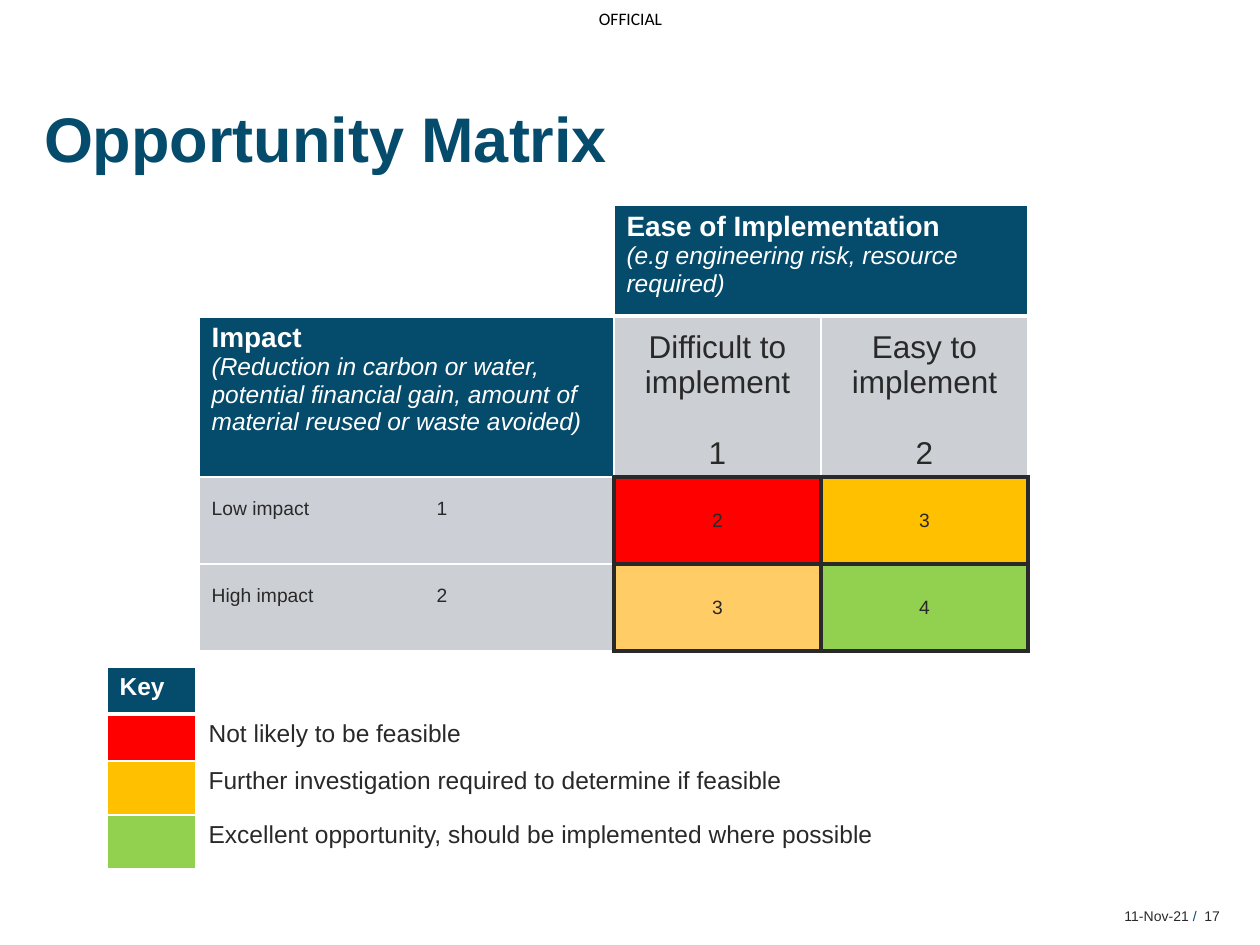
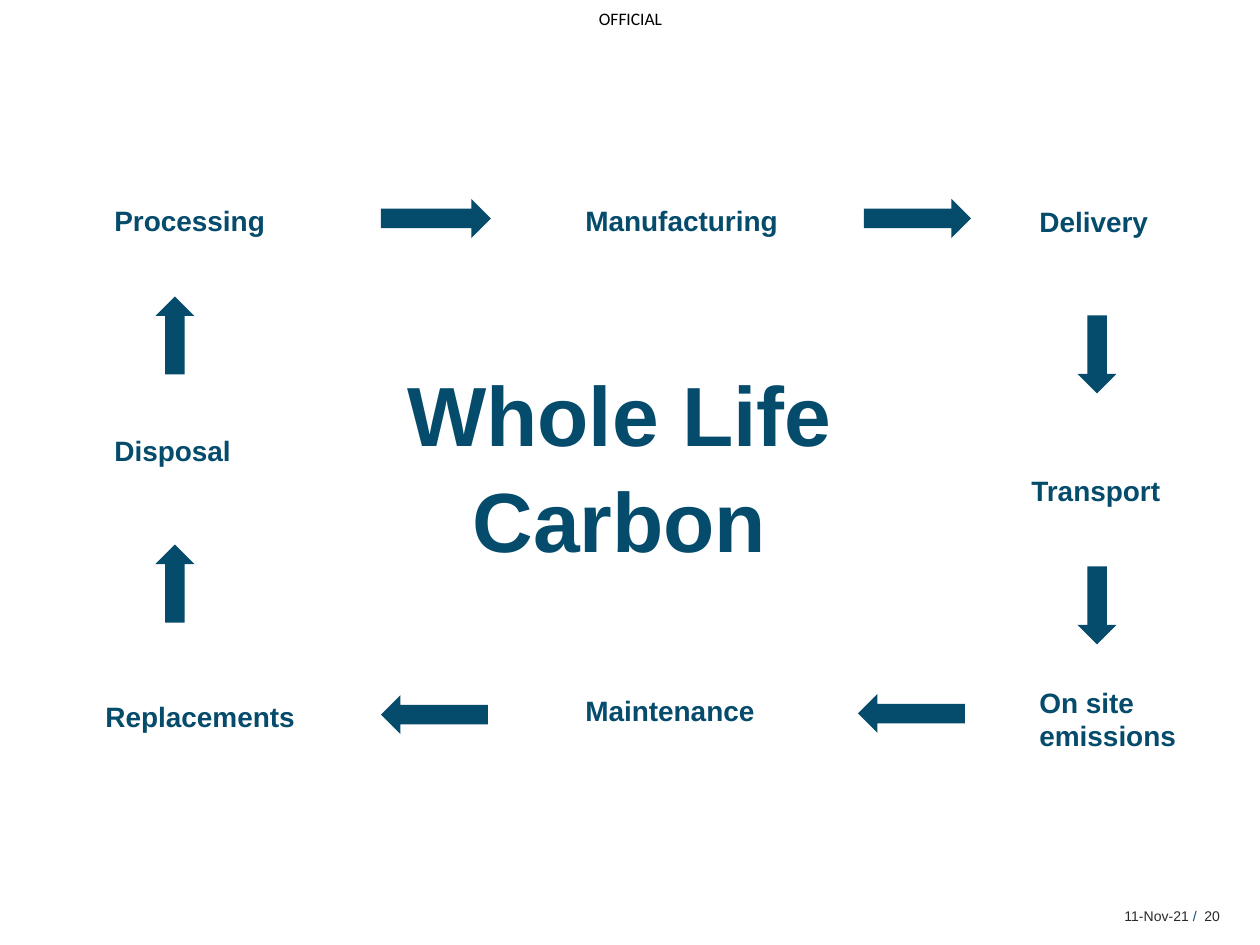
from pptx import Presentation
from pptx.dml.color import RGBColor
from pptx.enum.shapes import MSO_SHAPE as Shape
from pptx.enum.text import MSO_ANCHOR as Anchor, PP_ALIGN as Align
from pptx.oxml.ns import qn
from pptx.util import Pt
from lxml.etree import SubElement, Element

PX = 914400 / 126
COLORS = {
    "navy": "054B6B", "dark": "292929", "black": "000000", "white": "FFFFFF",
    "grey": "CCD0D4", "cool": "CCD0D6", "red": "FF0000", "amber": "FFC000",
    "peach": "FFCC66", "green": "92D050",
}
FORMATS = {
    "title": {"size": 36, "bold": True, "color": "navy"},
    "hero": {"size": 48, "bold": True, "color": "navy"},
    "label": {"size": 16, "bold": True, "color": "navy"},
    "marking": {"size": 10, "name": "Calibri", "color": "black"},
    "footer": {"size": 8, "color": "dark"},
    "slash": {"size": 8, "color": "navy"},
    "head": {"size": 16, "bold": True, "color": "white"},
    "hint": {"size": 14, "italic": True, "color": "white"},
    "key": {"size": 14, "bold": True, "color": "white"},
    "column": {"size": 18, "color": "dark"},
    "score": {"size": 11, "color": "dark"},
    "meaning": {"size": 14, "color": "dark"},
}
SIDES = "LRTB"


def emu(px):
    return round(px * PX)


def rgb(name):
    return RGBColor.from_string(COLORS[name])


class Deck:
    def __init__(self):
        self.prs = Presentation()
        self.prs.slide_width, self.prs.slide_height = emu(1260), emu(945)
        self.s = None

    def slide(self, number):
        """Start a slide with its marking and footer."""
        self.s = self.prs.slides.add_slide(self.prs.slide_layouts[6])
        bare = {"inset": 0, "anchor": Anchor.MIDDLE}
        self.text((1193, 903, 5, 25), [("/", "slash")], wrap=False, **bare)
        self.text((580, 0, 101, 37), [("OFFICIAL", "marking")],
                  align=Align.CENTER, **bare)
        for box, txt in (((895, 903, 294, 25), "11-Nov-21"),
                         ((1200, 903, 20, 25), number)):
            self.text(box, [(txt, "footer")], align=Align.RIGHT, **bare)

    def paragraphs(self, tf, lines, align=Align.LEFT, spacing=None, gap=None,
                   tab=None):
        """Fill a text frame with (text, format) lines; gap separates them."""
        for i, (txt, fmt) in enumerate(lines):
            p = tf.add_paragraph() if i else tf.paragraphs[0]
            if tab:
                tabs = SubElement(p._p.get_or_add_pPr(), qn("a:tabLst"))
                SubElement(tabs, qn("a:tab"), pos=str(emu(tab)), algn="l")
            p.alignment = align
            if spacing:
                p.line_spacing = spacing
            if gap and i:
                p.space_before = Pt(gap)
            r = p.add_run()
            r.text = txt
            for key, value in {"name": "Arial", **FORMATS[fmt]}.items():
                if key == "color":
                    r.font.color.rgb = rgb(value)
                else:
                    setattr(r.font, key, Pt(value) if key == "size" else value)

    def text(self, box, lines, inset=None, anchor=Anchor.TOP, wrap=True, **para):
        tf = self.s.shapes.add_textbox(*map(emu, box)).text_frame
        tf.word_wrap, tf.vertical_anchor = wrap, anchor
        if inset is not None:
            for side in ("left", "right", "top", "bottom"):
                setattr(tf, f"margin_{side}", emu(inset))
        self.paragraphs(tf, lines, **para)

    def title(self, box, txt, fmt, align=Align.LEFT):
        self.text(box, [(txt, fmt)], inset=0, align=align, spacing=1.05)

    def arrow(self, x, y, length, turn):
        sp = self.s.shapes.add_shape(Shape.RIGHT_ARROW, *map(emu, (x, y, length, 39)))
        sp.shadow.inherit = False
        sp.fill.solid()
        sp.fill.fore_color.rgb = rgb("navy")
        sp.line.fill.background()
        sp.rotation = turn

    def table(self, left, top, widths, heights):
        """Add an unbanded table with the given columns and rows."""
        box = map(emu, (left, top, sum(widths), sum(heights)))
        tbl = self.s.shapes.add_table(len(heights), len(widths), *box).table
        tbl.first_row = tbl.horz_banding = False
        for col, w in zip(tbl.columns, widths):
            col.width = emu(w)
        for row, h in zip(tbl.rows, heights):
            row.height = emu(h)
        return tbl

    def cell(self, cell, fill=None, lines=(), edges=None, anchor=Anchor.TOP,
             bottom=None, **para):
        """Style one cell; edges override its thin white borders."""
        if fill:
            cell.fill.solid()
            cell.fill.fore_color.rgb = rgb(fill)
        else:
            cell.fill.background()
        cell.vertical_anchor = anchor
        if bottom:
            cell.margin_bottom = emu(bottom)
        if lines:
            self.paragraphs(cell.text_frame, lines, **para)
        else:
            end = cell.text_frame.paragraphs[0]._p.get_or_add_endParaRPr()
            end.set("sz", "1400")
        # Borders come before the fill
        tcPr = cell._tc.get_or_add_tcPr()
        for i, side in enumerate(SIDES):
            color, width = (edges or {}).get(side, ("white", 1))
            ln = Element(qn(f"a:ln{side}"), w=str(Pt(width)))
            solid = SubElement(ln, qn("a:solidFill"))
            SubElement(solid, qn("a:srgbClr"), val=COLORS[color])
            tcPr.insert(i, ln)


def opportunity_matrix(d):
    d.slide("17")
    d.title((44, 96, 815, 76), "Opportunity Matrix", "title")
    thick, rule = ("dark", 3), {"B": ("white", 3)}

    # Matrix headings
    tbl = d.table(199, 205, (355, 60, 207, 207), (111, 159, 87, 87))
    tbl.cell(0, 2).merge(tbl.cell(0, 3))
    for row in (1, 2, 3):
        tbl.cell(row, 0).merge(tbl.cell(row, 1))
    ease = [("Ease of Implementation", "head"),
            ("(e.g engineering risk, resource required)", "hint")]
    impact = [("Impact", "head"),
              ("(Reduction in carbon or water, potential financial gain, "
               "amount of material reused or waste avoided)", "hint")]
    for col, (fill, lines) in enumerate((("white", ()), ("white", ()),
                                         ("navy", ease), ("navy", ()))):
        d.cell(tbl.cell(0, col), fill, lines, rule)
    d.cell(tbl.cell(1, 0), "navy", impact)
    d.cell(tbl.cell(1, 1), "navy")
    for col, (name, score) in enumerate((("Difficult to implement", "1"),
                                         ("Easy to implement", "2")), 2):
        d.cell(tbl.cell(1, col), "grey", [(name, "column"), (score, "column")],
               {"B": thick}, Anchor.BOTTOM, align=Align.CENTER, gap=20)

    # Matrix scores
    rows = (("Low impact\t1", "cool", (("2", "red"), ("3", "amber"))),
            ("High impact\t2", "grey", (("3", "peach"), ("4", "green"))))
    for row, (name, fill, scores) in enumerate(rows, 2):
        d.cell(tbl.cell(row, 0), fill, [(name, "score")], {"R": thick},
               Anchor.MIDDLE, bottom=29, tab=225)
        d.cell(tbl.cell(row, 1), fill, edges={"R": thick})
        for col, (score, color) in enumerate(scores, 2):
            d.cell(tbl.cell(row, col), color, [(score, "score")],
                   dict.fromkeys(SIDES, thick), Anchor.MIDDLE, align=Align.CENTER)

    # Key
    tbl = d.table(107, 667, (89, 696), (47, 47, 54, 54))
    d.cell(tbl.cell(0, 0), "navy", [("Key", "key")], rule)
    d.cell(tbl.cell(0, 1), edges=rule)
    meanings = (("red", "Not likely to be feasible"),
                ("amber", "Further investigation required to determine if feasible"),
                ("green", "Excellent opportunity, should be implemented where possible"))
    for row, (color, meaning) in enumerate(meanings, 1):
        d.cell(tbl.cell(row, 0), color)
        d.cell(tbl.cell(row, 1), None, [(meaning, "meaning")])


def whole_life_carbon(d):
    d.slide("20")
    d.title((307, 358, 625, 100), "Whole Life Carbon", "hero", Align.CENTER)

    # Stages, clockwise
    stages = ((102, 197, 184, "Processing"), (573, 197, 233, "Manufacturing"),
              (1027, 198, 144, "Delivery"), (1019, 467, 169, "Transport"),
              (1027, 679, 168, "On site", "emissions"),
              (573, 687, 200, "Maintenance"), (93, 693, 222, "Replacements"),
              (102, 427, 145, "Disposal"))
    for x, y, w, *lines in stages:
        d.text((x, y, w, 14 + 33 * len(lines)), [(txt, "label") for txt in lines])

    # Arrows between the stages
    for arrow in ((381, 199, 110, 0), (864, 199, 107, 0),
                  (1058, 335, 78, 90), (1058, 586, 78, 90),
                  (858, 694, 107, 180), (381, 695, 107, 180),
                  (136, 564, 78, 270), (136, 316, 78, 270)):
        d.arrow(*arrow)


def main():
    d = Deck()
    opportunity_matrix(d)
    whole_life_carbon(d)
    d.prs.save("out.pptx")


if __name__ == "__main__":
    main()
